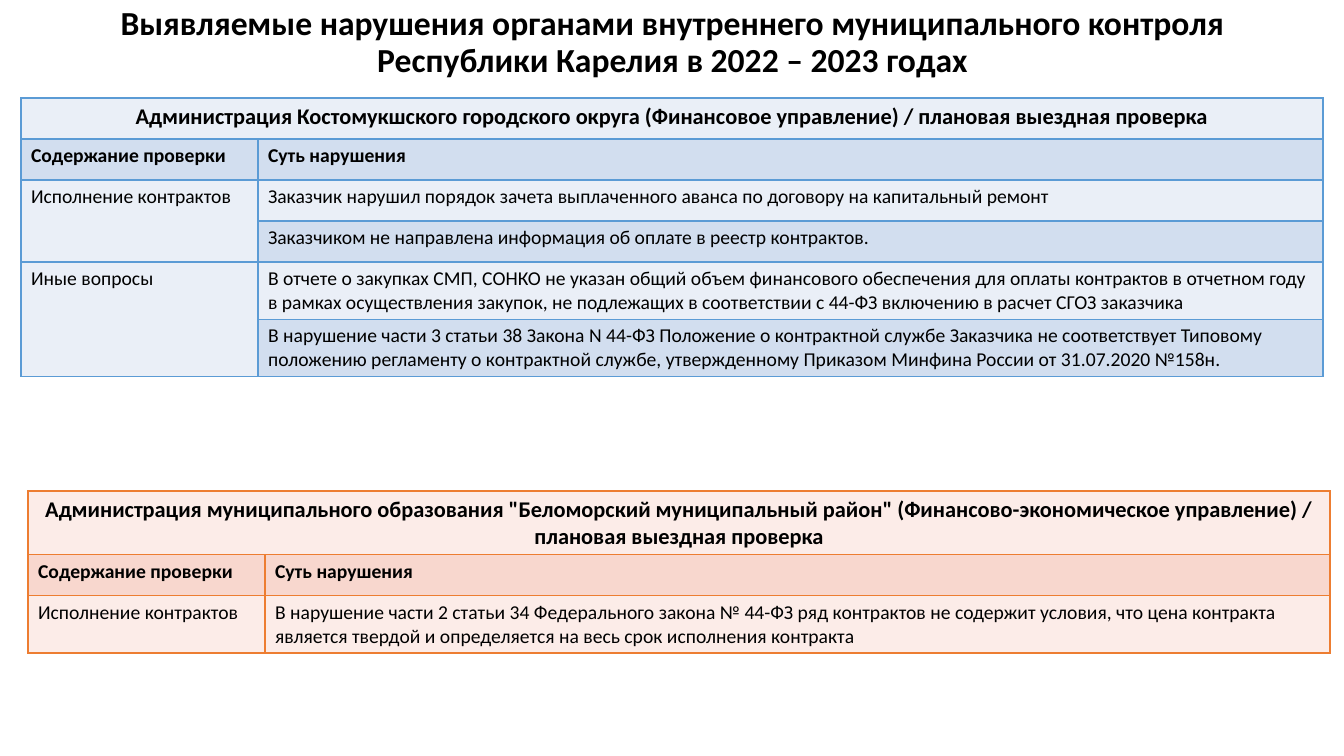
from lxml.etree import SubElement
from pptx import Presentation
from pptx.dml.color import RGBColor
from pptx.enum.text import MSO_ANCHOR, PP_ALIGN
from pptx.oxml.ns import qn
from pptx.util import Emu, Pt

PAGE_WIDTH, PAGE_HEIGHT = 1344, 756
COLUMN_WIDTHS = (237, 1065)
ROW_HEIGHT = 41
COLUMN_TITLES = ("Содержание проверки", "Суть нарушения")

TITLE = (
    "Выявляемые нарушения органами внутреннего муниципального контроля "
    "Республики Карелия в 2022 – 2023 годах"
)
KOSTOMUKSHA = (
    "Администрация Костомукшского городского округа (Финансовое управление) / "
    "плановая выездная проверка"
)
KOSTOMUKSHA_FINDINGS = [
    ("Исполнение контрактов", [
        "Заказчик нарушил порядок зачета выплаченного аванса по договору "
        "на капитальный ремонт",
        "Заказчиком не направлена информация об оплате в реестр контрактов.",
    ]),
    ("Иные вопросы", [
        "В отчете о закупках СМП, СОНКО не указан общий объем финансового "
        "обеспечения для оплаты контрактов в отчетном году в рамках осуществления "
        "закупок, не подлежащих в соответствии с 44-ФЗ включению в расчет СГОЗ заказчика",
        "В нарушение части 3 статьи 38 Закона N 44-ФЗ Положение о контрактной службе "
        "Заказчика не соответствует Типовому положению регламенту о контрактной службе, "
        "утвержденному Приказом Минфина России от 31.07.2020 №158н.",
    ]),
]
BELOMORSK = (
    'Администрация муниципального образования "Беломорский муниципальный район" '
    "(Финансово-экономическое управление) / плановая выездная проверка"
)
BELOMORSK_FINDINGS = [
    ("Исполнение контрактов", [
        "В нарушение части 2 статьи 34 Федерального закона № 44-ФЗ ряд контрактов "
        "не содержит условия, что цена контракта является твердой и определяется "
        "на весь срок исполнения контракта",
    ]),
]


def px(length):
    """Turn pixels into EMU."""
    return Emu(round(length * 914400 / 100.8))


def color(value):
    """Turn a hex string into a colour."""
    return RGBColor.from_string(value)


def write(frame, text, size, bold=False, align=PP_ALIGN.LEFT):
    """Write one styled paragraph into a text frame."""
    para = frame.paragraphs[0]
    para.text = text
    para.alignment = align
    para.font.name = "Calibri"
    para.font.size = Pt(size)
    para.font.bold = bold
    para.font.color.rgb = color("000000")
    return para


def set_borders(cell, line_color):
    """Give a cell a one-point border on every side."""
    properties = cell._tc.get_or_add_tcPr()
    for side in ("lnL", "lnR", "lnT", "lnB"):
        line = SubElement(properties, qn(f"a:{side}"), w=str(Pt(1)))
        fill = SubElement(line, qn("a:solidFill"))
        SubElement(fill, qn("a:srgbClr"), val=line_color)


def add_title(page, left, top, width, height):
    """Place the slide heading in its box."""
    frame = page.shapes.add_textbox(px(left), px(top), px(width), px(height)).text_frame
    frame.word_wrap = True
    frame.vertical_anchor = MSO_ANCHOR.MIDDLE
    write(frame, TITLE, 24, True, PP_ALIGN.CENTER).line_spacing = 0.9


def add_findings_table(page, left, top, heading, findings, line_color, bands):
    """Place a table of findings grouped by subject of inspection."""
    row_count = 2 + sum(len(violations) for _, violations in findings)
    table = page.shapes.add_table(
        row_count, len(COLUMN_WIDTHS), px(left), px(top),
        px(sum(COLUMN_WIDTHS)), px(ROW_HEIGHT * row_count),
    ).table
    table.first_row = table.horz_banding = False
    for column, width in zip(table.columns, COLUMN_WIDTHS):
        column.width = px(width)
    for index, row in enumerate(table.rows):
        row.height = px(ROW_HEIGHT)
        for cell in row.cells:
            set_borders(cell, line_color)
            cell.fill.solid()
            cell.fill.fore_color.rgb = color(bands[index % 2])

    table.cell(0, 0).merge(table.cell(0, 1))
    write(table.cell(0, 0).text_frame, heading, 16, True, PP_ALIGN.CENTER)
    for index, column_title in enumerate(COLUMN_TITLES):
        write(table.cell(1, index).text_frame, column_title, 14, True)

    first = 2
    for subject, violations in findings:
        if len(violations) > 1:
            table.cell(first, 0).merge(table.cell(first + len(violations) - 1, 0))
        write(table.cell(first, 0).text_frame, subject, 14)
        for index, violation in enumerate(violations, first):
            write(table.cell(index, 1).text_frame, violation, 14)
        first += len(violations)


def main():
    """Build the slide and save the deck."""
    deck = Presentation()
    deck.slide_width, deck.slide_height = px(PAGE_WIDTH), px(PAGE_HEIGHT)
    page = deck.slides.add_slide(deck.slide_layouts[6])
    add_title(page, 93, 11, 1159, 64)
    add_findings_table(page, 21, 98, KOSTOMUKSHA, KOSTOMUKSHA_FINDINGS,
                       "5B9BD5", ("EAEFF7", "D2DEEF"))
    add_findings_table(page, 28, 491, BELOMORSK, BELOMORSK_FINDINGS,
                       "ED7D31", ("FCECE8", "F8D7CE"))
    deck.save("out.pptx")


if __name__ == "__main__":
    main()
